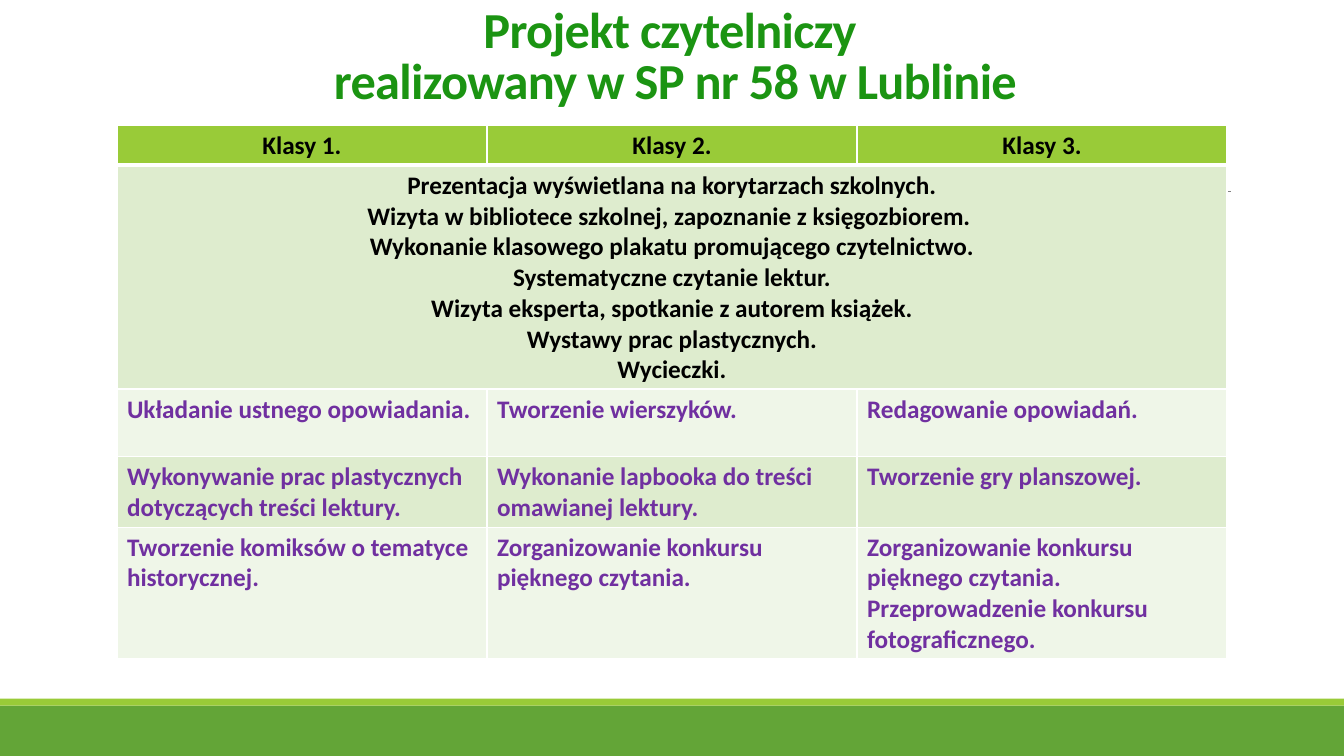
import dataclasses
import typing

import lxml.etree
import pptx
import pptx.dml.color
import pptx.enum.shapes
import pptx.enum.text
import pptx.oxml.ns
import pptx.util

RGBColor = pptx.dml.color.RGBColor
WHITE = RGBColor(0xFF, 0xFF, 0xFF)
BLACK = RGBColor(0x00, 0x00, 0x00)
GRAY = RGBColor(0x80, 0x80, 0x80)
TITLE_GREEN = RGBColor(0x1B, 0x94, 0x12)
DARK_GREEN = RGBColor(0x63, 0xA5, 0x37)
LIME = RGBColor(0x99, 0xCB, 0x38)
PALE_GREEN = RGBColor(0xDE, 0xEC, 0xCE)
PALEST_GREEN = RGBColor(0xEF, 0xF6, 0xE8)
PURPLE = RGBColor(0x70, 0x30, 0xA0)

FONT = "Calibri"
CENTER = pptx.enum.text.PP_ALIGN.CENTER
LEFT = pptx.enum.text.PP_ALIGN.LEFT
SLIDE_WIDTH = pptx.util.Inches(13.33)
SLIDE_HEIGHT = pptx.util.Inches(7.5)


@dataclasses.dataclass(frozen=True)
class Area:
    """A rectangle in percent of the slide's width and height."""
    left: float
    top: float
    width: float
    height: float

    def lengths(self) -> tuple[int, int, int, int]:
        return (across(self.left), down(self.top),
                across(self.width), down(self.height))


@dataclasses.dataclass(frozen=True)
class Band:
    area: Area
    color: RGBColor


@dataclasses.dataclass(frozen=True)
class Row:
    """A table row; a single cell spans all columns."""
    height: float
    fill: RGBColor
    cells: tuple[tuple[str, ...], ...]
    color: RGBColor = PURPLE
    align: pptx.enum.text.PP_ALIGN = LEFT


BANDS = (
    Band(Area(0, 93.33, 100, 6.67), DARK_GREEN),
    Band(Area(0, 92.4, 100, 0.93), LIME),
)
TITLE_AREA = Area(9, 0.8, 82.5, 14.4)
RULE = Area(9.83, 25.33, 81.77, 0)
TABLE_LEFT, TABLE_TOP, TABLE_WIDTH = 8.7, 16.53, 82.6
COLUMN_COUNT = 3

ROWS = (
    Row(5.2, LIME, (("Klasy 1.",), ("Klasy 2.",), ("Klasy 3.",)), BLACK, CENTER),
    Row(29.6, PALE_GREEN, ((
        "Prezentacja wyświetlana na korytarzach szkolnych.",
        "Wizyta w bibliotece szkolnej, zapoznanie z księgozbiorem. ",
        "Wykonanie klasowego plakatu promującego czytelnictwo.",
        "Systematyczne czytanie lektur.",
        "Wizyta eksperta, spotkanie z autorem książek.",
        "Wystawy prac plastycznych.",
        "Wycieczki.",
    ),), BLACK, CENTER),
    Row(8.93, PALEST_GREEN, (
        ("Układanie ustnego opowiadania.",),
        ("Tworzenie wierszyków.",),
        ("Redagowanie opowiadań.",),
    )),
    Row(8.93, PALE_GREEN, (
        ("Wykonywanie prac plastycznych dotyczących treści lektury.",),
        ("Wykonanie lapbooka do treści omawianej lektury.",),
        ("Tworzenie gry planszowej.",),
    )),
    Row(16.67, PALEST_GREEN, (
        ("Tworzenie komiksów o tematyce historycznej.",),
        ("Zorganizowanie konkursu pięknego czytania.",),
        ("Zorganizowanie konkursu pięknego czytania.",
         "Przeprowadzenie konkursu fotograficznego."),
    )),
)


def across(percent: float) -> int:
    return round(SLIDE_WIDTH * percent / 100)


def down(percent: float) -> int:
    return round(SLIDE_HEIGHT * percent / 100)


def write_text(text_frame, paragraphs: typing.Sequence[str], *, size: float,
               color: RGBColor, align: pptx.enum.text.PP_ALIGN,
               line_spacing: float | None = None, tracking: float = 0) -> None:
    for index, text in enumerate(paragraphs):
        paragraph = text_frame.add_paragraph() if index else text_frame.paragraphs[0]
        paragraph.text = text
        paragraph.alignment = align
        paragraph.line_spacing = line_spacing
        for run in paragraph.runs:
            run.font.name = FONT
            run.font.size = pptx.util.Pt(size)
            run.font.bold = True
            run.font.color.rgb = color
            if tracking:
                run._r.get_or_add_rPr().set("spc", str(round(tracking * 100)))


def draw_band(slide, band: Band) -> None:
    shape = slide.shapes.add_shape(
        pptx.enum.shapes.MSO_SHAPE.RECTANGLE, *band.area.lengths())
    shape.shadow.inherit = False
    shape.fill.solid()
    shape.fill.fore_color.rgb = band.color
    shape.line.fill.background()


def draw_rule(slide, area: Area) -> None:
    left, top, width, height = area.lengths()
    connector = slide.shapes.add_connector(
        pptx.enum.shapes.MSO_CONNECTOR.STRAIGHT, left, top, left + width, top + height)
    connector.line.color.rgb = GRAY
    connector.line.width = pptx.util.Pt(0.5)
    lxml.etree.SubElement(connector._element.spPr, pptx.oxml.ns.qn("a:effectLst"))


def draw_title(slide) -> None:
    text_frame = slide.shapes.add_textbox(*TITLE_AREA.lengths()).text_frame
    text_frame.word_wrap = True
    text_frame.vertical_anchor = pptx.enum.text.MSO_ANCHOR.BOTTOM
    write_text(text_frame, ["Projekt czytelniczy \nrealizowany w SP nr 58 w Lublinie"],
               size=36, color=TITLE_GREEN, align=CENTER,
               line_spacing=0.85, tracking=-0.5)


def set_borders(cell, **widths: float) -> None:
    """Draw white borders, named by side in schema order, widths in points."""
    properties = cell._tc.get_or_add_tcPr()
    for position, (side, width) in enumerate(widths.items()):
        line = lxml.etree.Element(pptx.oxml.ns.qn(f"a:ln{side}"),
                                  w=str(pptx.util.Pt(width)))
        fill = lxml.etree.SubElement(line, pptx.oxml.ns.qn("a:solidFill"))
        lxml.etree.SubElement(fill, pptx.oxml.ns.qn("a:srgbClr"), val=str(WHITE))
        properties.insert(position, line)


def draw_table(slide) -> None:
    area = Area(TABLE_LEFT, TABLE_TOP, TABLE_WIDTH, sum(row.height for row in ROWS))
    table = slide.shapes.add_table(len(ROWS), COLUMN_COUNT, *area.lengths()).table
    table.horz_banding = False
    for column in table.columns:
        column.width = across(TABLE_WIDTH / COLUMN_COUNT)
    for row_index, row in enumerate(ROWS):
        table.rows[row_index].height = down(row.height)
        for column_index in range(COLUMN_COUNT):
            cell = table.cell(row_index, column_index)
            cell.fill.solid()
            cell.fill.fore_color.rgb = row.fill
            set_borders(cell, L=1, R=1, T=3 if row_index == 1 else 1,
                        B=3 if row_index == 0 else 1)
        if len(row.cells) == 1:
            table.cell(row_index, 0).merge(table.cell(row_index, COLUMN_COUNT - 1))
        for column_index, paragraphs in enumerate(row.cells):
            write_text(table.cell(row_index, column_index).text_frame, paragraphs,
                       size=18, color=row.color, align=row.align)


def main() -> None:
    presentation = pptx.Presentation()
    presentation.slide_width = SLIDE_WIDTH
    presentation.slide_height = SLIDE_HEIGHT
    slide = presentation.slides.add_slide(presentation.slide_layouts[6])

    # Footer bands and the thin rule behind the table
    for band in BANDS:
        draw_band(slide, band)
    draw_rule(slide, RULE)

    # Title and class plan
    draw_title(slide)
    draw_table(slide)
    presentation.save("out.pptx")


if __name__ == "__main__":
    main()
